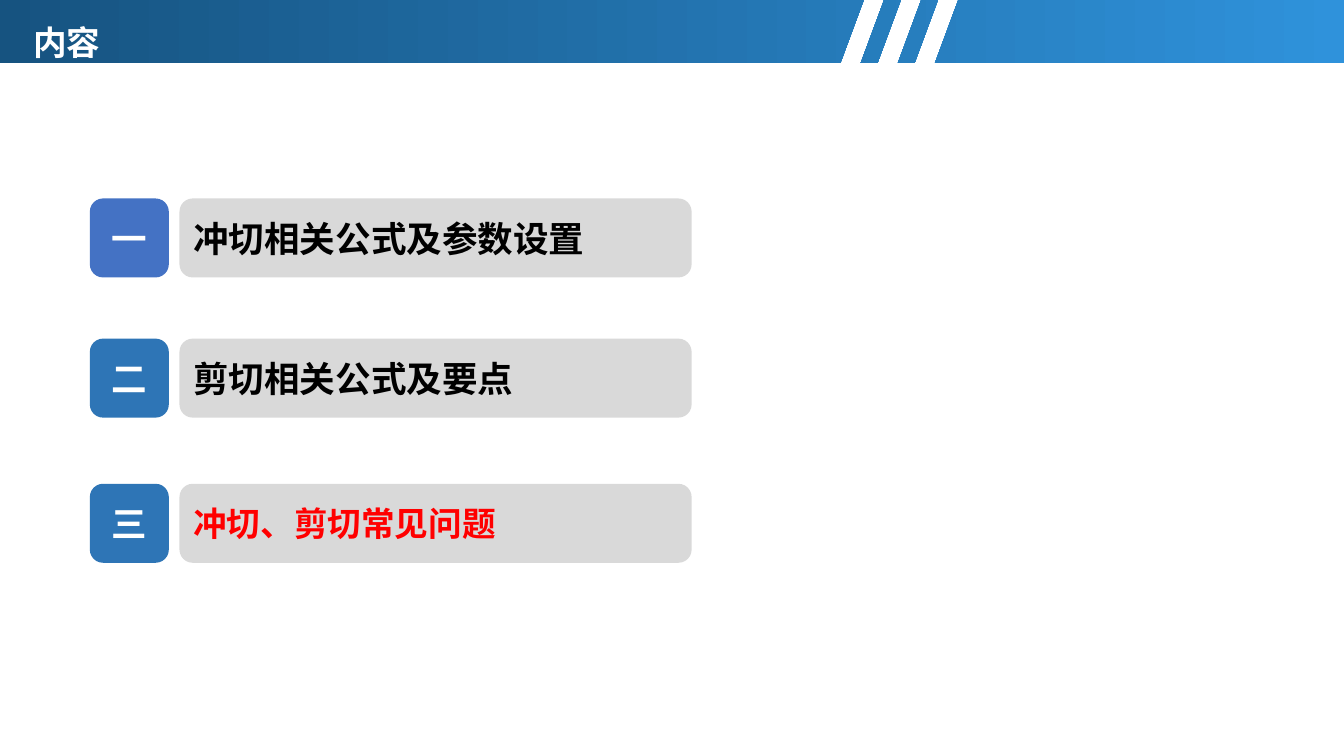
from lxml import etree
from pptx import Presentation
from pptx import util as u
from pptx.dml.color import RGBColor
from pptx.enum import shapes, text
from pptx.oxml.ns import qn

COLORS = {
    "banner_light": "2F92DB",
    "banner_dark": "165380",
    "indigo": "4472C4",
    "blue": "2E75B6",
    "gray": "D9D9D9",
    "white": "FFFFFF",
    "black": "000000",
    "red": "FF0000",
}
WIDTH, HEIGHT = 960, 540
BANNER_HEIGHT = 45.36
SLANT = 16.8
STRIPE_WIDTH, STRIPE_STEP = 12, 26.5
FIRST_STRIPE = 631.5
BADGE_LEFT, BAR_LEFT = 64.2, 128.2
ROW_HEIGHT, BAR_WIDTH = 56.4, 365.8

AGENDA = [
    (141.8, "一", "indigo", "冲切相关公式及参数设置", 25.4, "black"),
    (241.9, "二", "blue", "剪切相关公式及要点", 25.4, "black"),
    (345.6, "三", "blue", "冲切、剪切常见问题", 24, "red"),
]


class SlideBuilder:
    heading_font = "Calibri"
    body_font = "Noto Sans CJK SC"

    def __init__(self, presentation):
        self.slide = presentation.slides.add_slide(presentation.slide_layouts[5])

    def color(self, name):
        return RGBColor.from_string(COLORS[name])

    def set_text(self, shape, words, size, color, font_name, alignment):
        frame = shape.text_frame
        frame.word_wrap = True
        frame.auto_size = text.MSO_AUTO_SIZE.NONE
        frame.vertical_anchor = text.MSO_ANCHOR.MIDDLE
        frame.text = words
        paragraph = frame.paragraphs[0]
        paragraph.alignment = alignment
        font = paragraph.font
        font.size, font.bold, font.name = u.Pt(size), True, font_name
        font.color.rgb = self.color(color)
        return font

    def title(self, words, left, top, width, height):
        shape = self.slide.shapes.title
        shape.left, shape.top = u.Pt(left), u.Pt(top)
        shape.width, shape.height = u.Pt(width), u.Pt(height)
        self.set_text(shape, words, 24, "white", self.heading_font, text.PP_ALIGN.LEFT)

    def banner(self, outlines):
        builder = None
        for outline in outlines:
            points = [(u.Pt(x), u.Pt(y)) for x, y in outline]
            if builder is None:
                builder = self.slide.shapes.build_freeform(*points[0])
            else:
                builder.move_to(*points[0])
            builder.add_line_segments(points[1:], close=True)
        shape = builder.convert_to_shape()
        shape.shadow.inherit = False
        shape.line.fill.background()
        shape.fill.gradient()
        shape.fill.gradient_angle = 180
        for stop, name in zip(shape.fill.gradient_stops, ("banner_light", "banner_dark")):
            stop.color.rgb = self.color(name)
        self.slide.shapes.title._element.addprevious(shape._element)

    def box(self, left, top, width, fill, words, size, color, alignment):
        shape = self.slide.shapes.add_shape(
            shapes.MSO_SHAPE.ROUNDED_RECTANGLE,
            u.Pt(left), u.Pt(top), u.Pt(width), u.Pt(ROW_HEIGHT),
        )
        shape.shadow.inherit = False
        shape.fill.solid()
        shape.fill.fore_color.rgb = self.color(fill)
        shape.line.fill.background()
        font = self.set_text(shape, words, size, color, self.body_font, alignment)
        east_asian = etree.SubElement(font._element, qn("a:ea"))
        east_asian.set("typeface", self.body_font)


def slanted(left, right):
    return [(left, 0), (right, 0), (right - SLANT, BANNER_HEIGHT), (left - SLANT, BANNER_HEIGHT)]


def banner_outlines():
    stripes = [FIRST_STRIPE + index * STRIPE_STEP for index in range(2)]
    left_end = FIRST_STRIPE - STRIPE_STEP + STRIPE_WIDTH
    right_start = FIRST_STRIPE + 2 * STRIPE_STEP
    left_part = [(0, 0), (left_end, 0), (left_end - SLANT, BANNER_HEIGHT), (0, BANNER_HEIGHT)]
    right_part = [
        (right_start, 0), (WIDTH, 0), (WIDTH, BANNER_HEIGHT), (right_start - SLANT, BANNER_HEIGHT),
    ]
    return [left_part, *(slanted(x, x + STRIPE_WIDTH) for x in stripes), right_part]


def main():
    presentation = Presentation()
    presentation.slide_width, presentation.slide_height = u.Pt(WIDTH), u.Pt(HEIGHT)
    builder = SlideBuilder(presentation)
    builder.banner(banner_outlines())
    builder.title("内容", 16.6, 12.2, 868.3, 36)
    for top, number, fill, topic, size, color in AGENDA:
        builder.box(BADGE_LEFT, top, ROW_HEIGHT, fill, number, 25.4, "white", text.PP_ALIGN.CENTER)
        builder.box(BAR_LEFT, top, BAR_WIDTH, "gray", topic, size, color, text.PP_ALIGN.LEFT)
    presentation.save("out.pptx")


if __name__ == "__main__":
    main()
